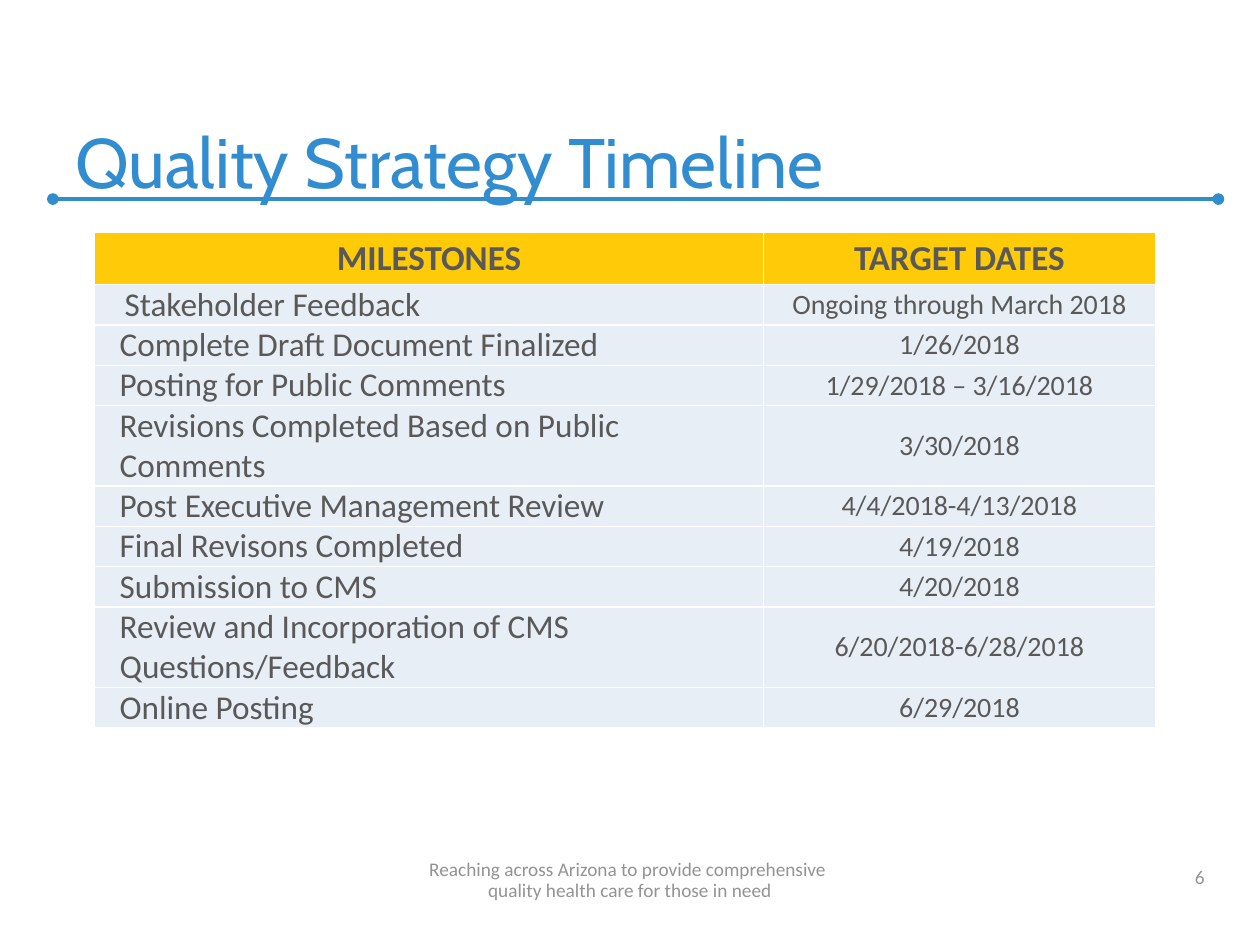
from dataclasses import dataclass

import pptx
import pptx.dml.color
import pptx.enum.shapes
import pptx.enum.text
import pptx.oxml
import pptx.oxml.ns
import pptx.util

Inches = pptx.util.Inches
Pt = pptx.util.Pt
Align = pptx.enum.text.PP_ALIGN
Anchor = pptx.enum.text.MSO_ANCHOR
NS = pptx.oxml.ns.nsdecls("a")


@dataclass(frozen=True)
class Theme:
    body: str = "Calibri"
    head: str = "Cabin"
    blue: str = "318DCF"
    rule: str = "318DCC"
    gold: str = "FFCB08"
    pale: str = "E8EEF6"
    ink: str = "595959"
    gray: str = "939393"
    white: str = "FFFFFF"
    title: float = 40
    label: float = 20
    item: float = 19
    date: float = 16
    foot: float = 11


@dataclass(frozen=True)
class Step:
    name: str
    date: str
    high: float = 0.32
    indent: float = 0.2


@dataclass(frozen=True)
class Style:
    size: float
    color: str
    font: str = Theme.body
    bold: bool = False
    align: Align = Align.LEFT


THEME = Theme()
LABEL = Style(THEME.label, THEME.ink, bold=True, align=Align.CENTER)
ITEM = Style(THEME.item, THEME.ink)
DATE = Style(THEME.date, THEME.ink, align=Align.CENTER)
TALL = 0.64
STEPS = [
    Step("Stakeholder Feedback", "Ongoing through March 2018", indent=0.24),
    Step("Complete Draft Document Finalized", "1/26/2018"),
    Step("Posting for Public Comments", "1/29/2018 – 3/16/2018"),
    Step("Revisions Completed Based on Public Comments", "3/30/2018", TALL),
    Step("Post Executive Management Review", "4/4/2018-4/13/2018"),
    Step("Final Revisons Completed", "4/19/2018"),
    Step("Submission to CMS", "4/20/2018"),
    Step("Review and Incorporation of CMS Questions/Feedback",
         "6/20/2018-6/28/2018", TALL),
    Step("Online Posting", "6/29/2018"),
]


def rgb(code: str) -> pptx.dml.color.RGBColor:
    return pptx.dml.color.RGBColor.from_string(code)


def write(frame, text: str, style: Style) -> None:
    frame.word_wrap = True
    para = frame.paragraphs[0]
    para.text = text
    para.alignment = style.align
    for run in para.runs:
        run.font.name = style.font
        run.font.size = Pt(style.size)
        run.font.bold = style.bold
        run.font.color.rgb = rgb(style.color)


def add_text(slide, box: tuple, text: str, style: Style):
    frame = slide.shapes.add_textbox(*map(Inches, box)).text_frame
    frame.vertical_anchor = Anchor.BOTTOM
    write(frame, text, style)
    return frame


def add_rule(slide) -> None:
    """Draw the line under the title, with a dot at each end."""
    line = slide.shapes.add_connector(
        pptx.enum.shapes.MSO_CONNECTOR.STRAIGHT,
        Inches(0.42), Inches(1.58), Inches(9.67), Inches(1.58))
    line.line.color.rgb = rgb(THEME.rule)
    line.line.width = Pt(2.25)
    for end in ("headEnd", "tailEnd"):
        line.line._get_or_add_ln().append(
            pptx.oxml.parse_xml(f'<a:{end} {NS} type="oval"/>'))
    line._element.spPr.append(pptx.oxml.parse_xml(f"<a:effectLst {NS}/>"))


def fill_cell(cell, text: str, style: Style, fill: str,
              indent: float = 0) -> None:
    cell.margin_left = Inches(indent)
    cell.margin_right = cell.margin_top = cell.margin_bottom = 0
    cell.vertical_anchor = Anchor.MIDDLE
    props = cell._tc.get_or_add_tcPr()
    for side in "LRTB":
        props.append(pptx.oxml.parse_xml(
            f'<a:ln{side} {NS} w="{Pt(1)}"><a:solidFill>'
            f'<a:srgbClr val="{THEME.white}"/></a:solidFill></a:ln{side}>'))
    cell.fill.solid()
    cell.fill.fore_color.rgb = rgb(fill)
    write(cell.text_frame, text, style)


def add_steps(slide) -> None:
    highs = [0.42] + [step.high for step in STEPS]
    table = slide.shapes.add_table(
        len(highs), 2, Inches(0.75), Inches(1.84),
        Inches(8.42), Inches(sum(highs))).table
    table.horz_banding = False
    for col, wide in zip(table.columns, (5.31, 3.11)):
        col.width = Inches(wide)
    for row, high in zip(table.rows, highs):
        row.height = Inches(high)
    for col, text in enumerate(("MILESTONES", "TARGET DATES")):
        fill_cell(table.cell(0, col), text, LABEL, THEME.gold)
    for row, step in enumerate(STEPS, 1):
        fill_cell(table.cell(row, 0), step.name, ITEM, THEME.pale, step.indent)
        fill_cell(table.cell(row, 1), step.date, DATE, THEME.pale)


def main() -> None:
    deck = pptx.Presentation()
    deck.slide_width, deck.slide_height = Inches(10), Inches(7.5)
    slide = deck.slides.add_slide(deck.slide_layouts[6])
    add_rule(slide)
    add_text(slide, (0.5, 0.33, 9, 1.33), "Quality Strategy Timeline",
             Style(THEME.title, THEME.blue, THEME.head))
    add_steps(slide)
    add_text(slide, (7.33, 6.78, 2.33, 0.32), "6",
             Style(THEME.foot, THEME.gray, align=Align.RIGHT))
    motto = add_text(slide, (0, 6.78, 10, 0.42),
                     "Reaching across Arizona to provide comprehensive \v"
                     "quality health care for those in need",
                     Style(THEME.foot, THEME.gray, align=Align.CENTER))
    motto.paragraphs[0].line_spacing = Pt(12)
    deck.save("out.pptx")


if __name__ == "__main__":
    main()
